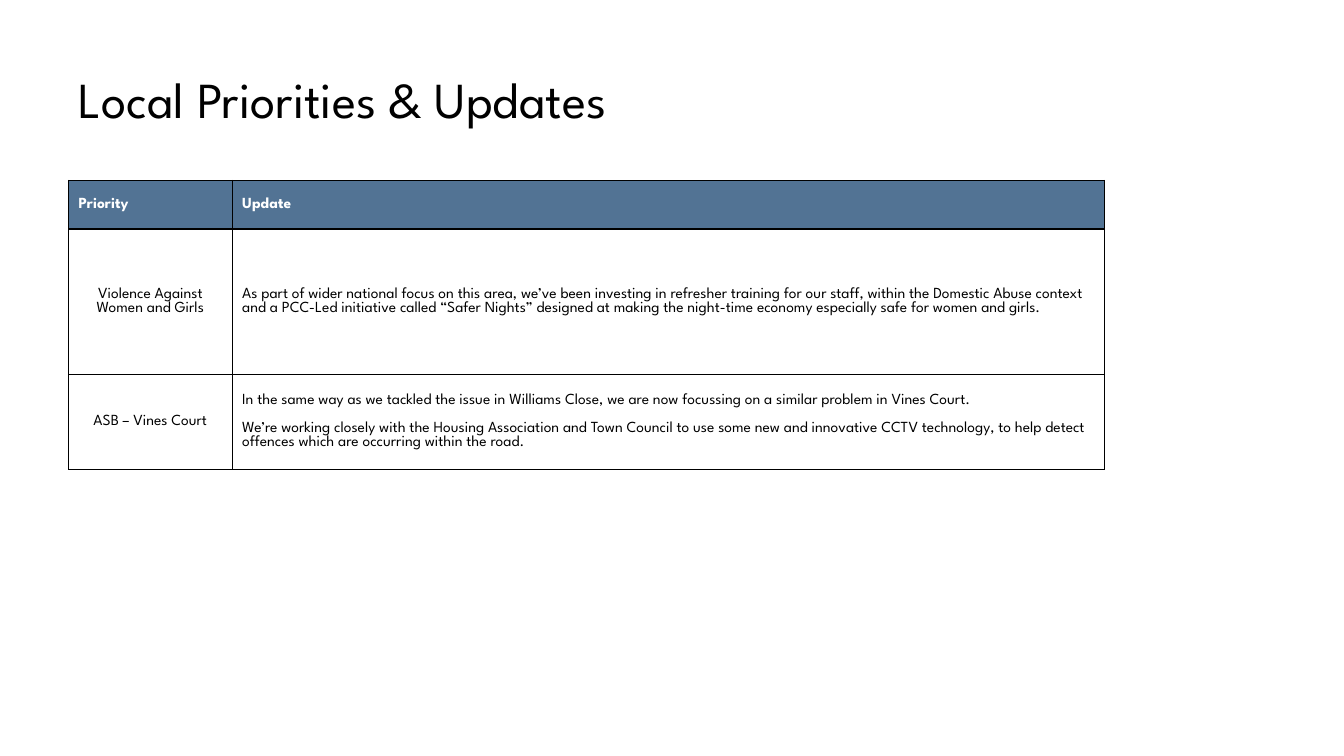
from dataclasses import dataclass

from lxml import etree
from pptx import Presentation
from pptx.dml.color import RGBColor
from pptx.enum.text import MSO_ANCHOR, PP_ALIGN
from pptx.oxml.ns import qn
from pptx.util import Cm, Pt

MIDDLE = MSO_ANCHOR.MIDDLE
LEFT, CENTER = PP_ALIGN.LEFT, PP_ALIGN.CENTER


@dataclass(frozen=True)
class Theme:
    """Colours, font and type sizes of the slide."""
    font: str = "League Spartan"
    ink: str = "000000"
    paper: str = "FFFFFF"
    head: str = "527394"
    title: float = 36
    body: float = 11
    gap: float = 9.5
    rule: float = 1


THEME = Theme()
HEADS = ["Priority", "Update"]
ROWS = [
    (["Violence Against Women and Girls"],
     ["As part of wider national focus on this area, we’ve been investing in "
      "refresher training for our staff, within the Domestic Abuse context and "
      "a PCC-Led initiative called “Safer Nights” designed at making the "
      "night-time economy especially safe for women and girls."]),
    (["ASB – Vines Court"],
     ["In the same way as we tackled the issue in Williams Close, we are now "
      "focussing on a similar problem in Vines Court.",
      "We’re working closely with the Housing Association and Town Council to "
      "use some new and innovative CCTV technology, to help detect offences "
      "which are occurring within the road."]),
]


def add_run(para, text, size, color, bold=False):
    """Add one styled run to a paragraph."""
    run = para.add_run()
    run.text = text
    font = run.font
    font.name, font.size, font.bold = THEME.font, Pt(size), bold
    font.color.rgb = RGBColor.from_string(color)


def add_title(slide, box, text):
    """Place the slide title in the box."""
    frame = slide.shapes.add_textbox(*box).text_frame
    frame.word_wrap = True
    frame.vertical_anchor = MIDDLE
    para = frame.paragraphs[0]
    para.line_spacing = 0.9
    add_run(para, text, THEME.title, THEME.ink)


def add_rules(cell):
    """Draw a thin line on all four sides of a cell."""
    props = cell._tc.get_or_add_tcPr()
    for spot, side in enumerate(("a:lnL", "a:lnR", "a:lnT", "a:lnB")):
        line = etree.Element(qn(side), w=str(Pt(THEME.rule)))
        fill = etree.SubElement(line, qn("a:solidFill"))
        etree.SubElement(fill, qn("a:srgbClr"), val=THEME.ink)
        props.insert(spot, line)


def fill_cell(cell, texts, fill, color, align=LEFT, bold=False):
    """Fill a cell with paragraphs, a background and borders."""
    cell.fill.solid()
    cell.fill.fore_color.rgb = RGBColor.from_string(fill)
    cell.vertical_anchor = MIDDLE
    frame = cell.text_frame
    for index, text in enumerate(texts):
        para = frame.add_paragraph() if index else frame.paragraphs[0]
        para.alignment = align
        if index:
            para.space_before = Pt(THEME.gap)
        add_run(para, text, THEME.body, color, bold)
    add_rules(cell)


def add_grid(slide, box, first, heights):
    """Place the table of priorities and updates in the box."""
    width = box[2]
    table = slide.shapes.add_table(len(ROWS) + 1, len(HEADS), *box).table
    table.columns[0].width = first
    table.columns[1].width = width - first
    for row, height in zip(table.rows, heights):
        row.height = height
    for col, head in enumerate(HEADS):
        fill_cell(table.cell(0, col), [head], THEME.head, THEME.paper, bold=True)
    for row, cells in enumerate(ROWS, 1):
        for col, (texts, align) in enumerate(zip(cells, (CENTER, LEFT))):
            fill_cell(table.cell(row, col), texts, THEME.paper, THEME.ink, align)


def main():
    """Build and save the slide."""
    deck = Presentation()
    deck.slide_width, deck.slide_height = Cm(33.87), Cm(19.05)
    slide = deck.slides.add_slide(deck.slide_layouts[6])
    left = Cm(1.73)
    add_title(slide, (left, Cm(1.57), Cm(30.28), Cm(2)),
              "Local Priorities & Updates")
    heights = [Cm(1.22), Cm(3.66), Cm(2.4)]
    add_grid(slide, (left, Cm(4.55), Cm(26.11), sum(heights)), Cm(4.12), heights)
    deck.save("out.pptx")


if __name__ == "__main__":
    main()
